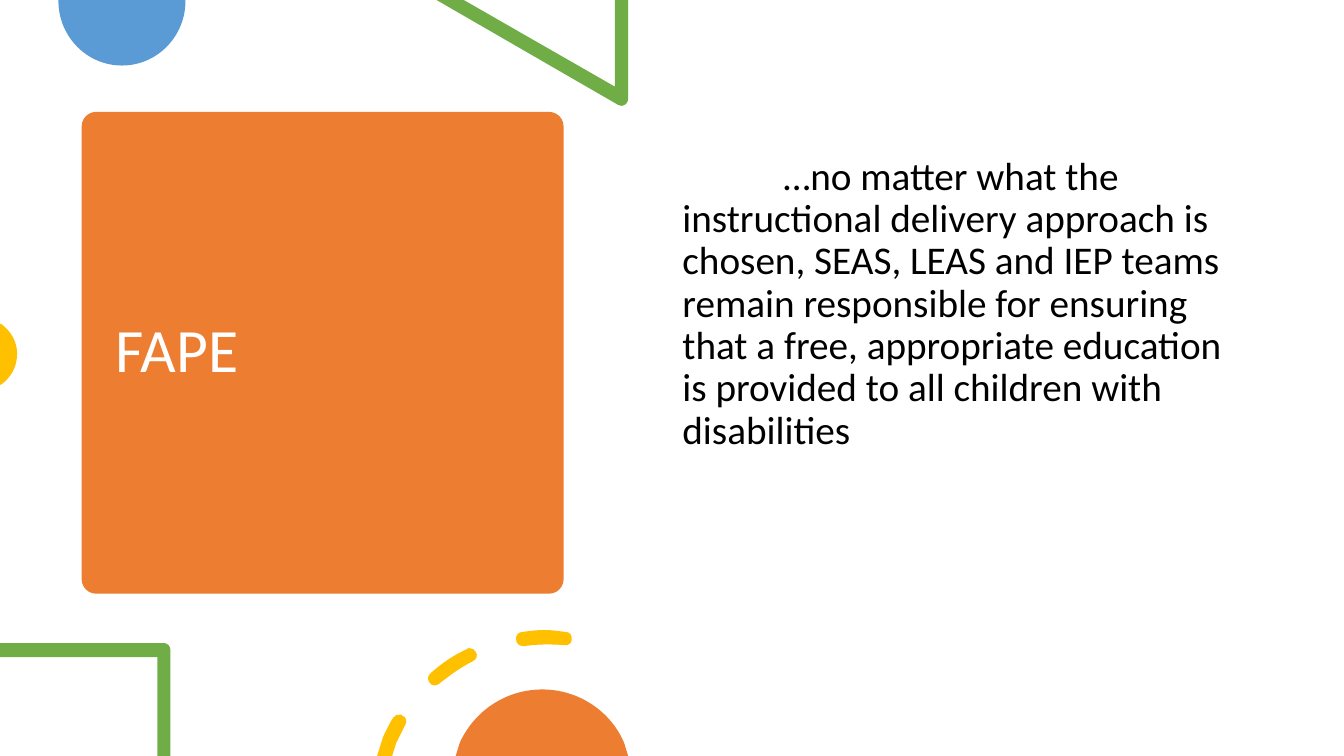
"""Build the FAPE slide: a title panel, a statement and decorative outlines."""
import lxml.etree
import pptx
import pptx.dml.color
import pptx.enum.shapes
import pptx.enum.text
import pptx.oxml.ns
import pptx.util

COLUMNS, ROWS = 1333, 750
CELL = pptx.util.Inches(0.01)
ORANGE, BLUE, GREEN, YELLOW = "ED7D31", "5B9BD5", "70AD47", "FFC000"
STATEMENT = (
    "…no matter what the instructional delivery approach is chosen, SEAS, LEAS "
    "and IEP teams remain responsible for ensuring that a free, appropriate "
    "education is provided to all children with disabilities"
)

BLUE_DISC = [[(184, 0), (58, 0), (58, 1), (58, 36, 86, 65, 121, 65),
              (156, 65, 184, 36, 184, 1)]]
TRIANGLE = [[(623, 0), (610, 0), (610, 86), (460, 0), (433, 0), (613, 104),
             (614, 105, 615, 105, 616, 105), (620, 105, 623, 102, 623, 98)]]
YELLOW_DISC = [[(0, 321), (0, 382), (2, 381), (11, 374, 17, 364, 17, 351),
                (17, 339, 11, 329, 2, 322)]]
CORNER = [[(163, 638), (0, 638), (0, 652), (156, 652), (156, 750), (169, 750),
           (169, 645), (169, 641, 166, 638, 163, 638)]]
DASHES = [
    [(397, 709), (394, 708, 392, 710, 390, 712), (386, 718, 383, 725, 380, 731),
     (374, 750), (389, 750), (393, 737), (396, 731, 399, 725, 402, 719),
     (404, 716, 403, 711, 399, 710), (399, 709, 398, 709, 397, 709)],
    [(465, 643), (465, 643, 464, 643, 463, 644), (450, 650, 438, 658, 427, 668),
     (424, 670, 424, 675, 426, 677), (427, 679, 429, 680, 431, 680),
     (433, 680, 435, 679, 436, 678), (446, 670, 457, 662, 469, 656),
     (473, 654, 474, 650, 472, 647), (471, 644, 468, 643, 465, 643)],
    [(540, 625), (532, 625, 525, 626, 518, 627), (514, 627, 511, 631, 512, 635),
     (512, 638, 515, 641, 519, 641), (519, 641, 519, 641, 520, 641),
     (533, 639, 546, 639, 560, 640), (563, 641, 567, 638, 567, 635),
     (568, 631, 565, 627, 562, 627), (562, 627, 561, 627, 561, 627),
     (554, 626, 547, 625, 540, 625)],
]
ORANGE_DISC = [[(538, 684), (501, 684, 470, 706, 456, 737), (452, 750),
                (623, 750), (619, 737), (606, 706, 574, 684, 538, 684)]]


def color(value):
    """Return the colour for a hex string."""
    return pptx.dml.color.RGBColor.from_string(value)


def paint(shape, fill):
    """Give a shape a flat fill without line or shadow."""
    shape.fill.solid()
    shape.fill.fore_color.rgb = color(fill)
    shape.line.fill.background()
    shape.shadow.inherit = False


def place(shape, left, top, width, height):
    """Put a shape on the grid."""
    shape.left, shape.top = left * CELL, top * CELL
    shape.width, shape.height = width * CELL, height * CELL


def write(shape, text, *, size, ink, anchor, inset=5, indent=0):
    """Write one left-aligned paragraph into a shape."""
    frame = shape.text_frame
    frame.word_wrap = True
    frame.auto_size = pptx.enum.text.MSO_AUTO_SIZE.NONE
    frame.vertical_anchor = anchor
    frame.margin_top = inset * CELL
    paragraph = frame.paragraphs[0]
    paragraph.alignment = pptx.enum.text.PP_ALIGN.LEFT
    paragraph.line_spacing = 0.9
    paragraph.space_before = pptx.util.Pt(0)
    paragraph._p.get_or_add_pPr().set("indent", str(indent * CELL))
    run = paragraph.add_run()
    run.text = text
    run.font.name = "Calibri"
    run.font.size = pptx.util.Pt(size)
    run.font.color.rgb = color(ink)


def bend(shape, contours):
    """Replace the straight segments of curved steps by cubic curves."""
    left, top = shape.left // CELL, shape.top // CELL
    qualified = pptx.oxml.ns.qn
    lines = list(shape._element.iter(qualified("a:lnTo")))
    segments = [segment for contour in contours for segment in contour[1:]]
    for line, segment in zip(lines, segments):
        if len(segment) == 2:
            continue
        curve = lxml.etree.Element(qualified("a:cubicBezTo"))
        for x, y in zip(segment[::2], segment[1::2]):
            lxml.etree.SubElement(curve, qualified("a:pt"),
                                  x=str(x - left), y=str(y - top))
        line.getparent().replace(line, curve)


def add_outline(slide, contours, fill):
    """Add one filled freeform made of closed contours of lines and curves."""
    first, *others = [[segment[-2:] for segment in contour] for contour in contours]
    builder = slide.shapes.build_freeform(*first[0], scale=CELL)
    builder.add_line_segments(first[1:], close=True)
    for points in others:
        builder.move_to(*points[0])
        builder.add_line_segments(points[1:], close=True)
    shape = builder.convert_to_shape()
    bend(shape, contours)
    paint(shape, fill)


def add_title_panel(slide):
    """Add the rounded panel and set the title on top of it."""
    panel = slide.shapes.add_shape(
        pptx.enum.shapes.MSO_SHAPE.ROUNDED_RECTANGLE, 0, 0, CELL, CELL)
    place(panel, 81, 111, 478, 478)
    panel.adjustments[0] = 0.03
    paint(panel, ORANGE)
    title = slide.shapes.title
    place(title, 105, 122, 431, 456)
    write(title, "FAPE", size=44, ink="FFFFFF",
          anchor=pptx.enum.text.MSO_ANCHOR.MIDDLE)
    panel._element.addnext(title._element)


def add_statement(slide):
    """Add the statement beside the panel."""
    box = slide.shapes.add_textbox(0, 0, CELL, CELL)
    place(box, 667, 90, 575, 535)
    write(box, STATEMENT, size=28, ink="000000", inset=65, indent=100,
          anchor=pptx.enum.text.MSO_ANCHOR.TOP)


def main():
    """Build and save the presentation."""
    presentation = pptx.Presentation()
    presentation.slide_width = COLUMNS * CELL
    presentation.slide_height = ROWS * CELL
    slide = presentation.slides.add_slide(presentation.slide_layouts[5])
    add_title_panel(slide)
    add_outline(slide, BLUE_DISC, BLUE)
    add_outline(slide, TRIANGLE, GREEN)
    add_outline(slide, YELLOW_DISC, YELLOW)
    add_statement(slide)
    add_outline(slide, CORNER, GREEN)
    add_outline(slide, DASHES, YELLOW)
    add_outline(slide, ORANGE_DISC, ORANGE)
    presentation.save("out.pptx")


if __name__ == "__main__":
    main()
